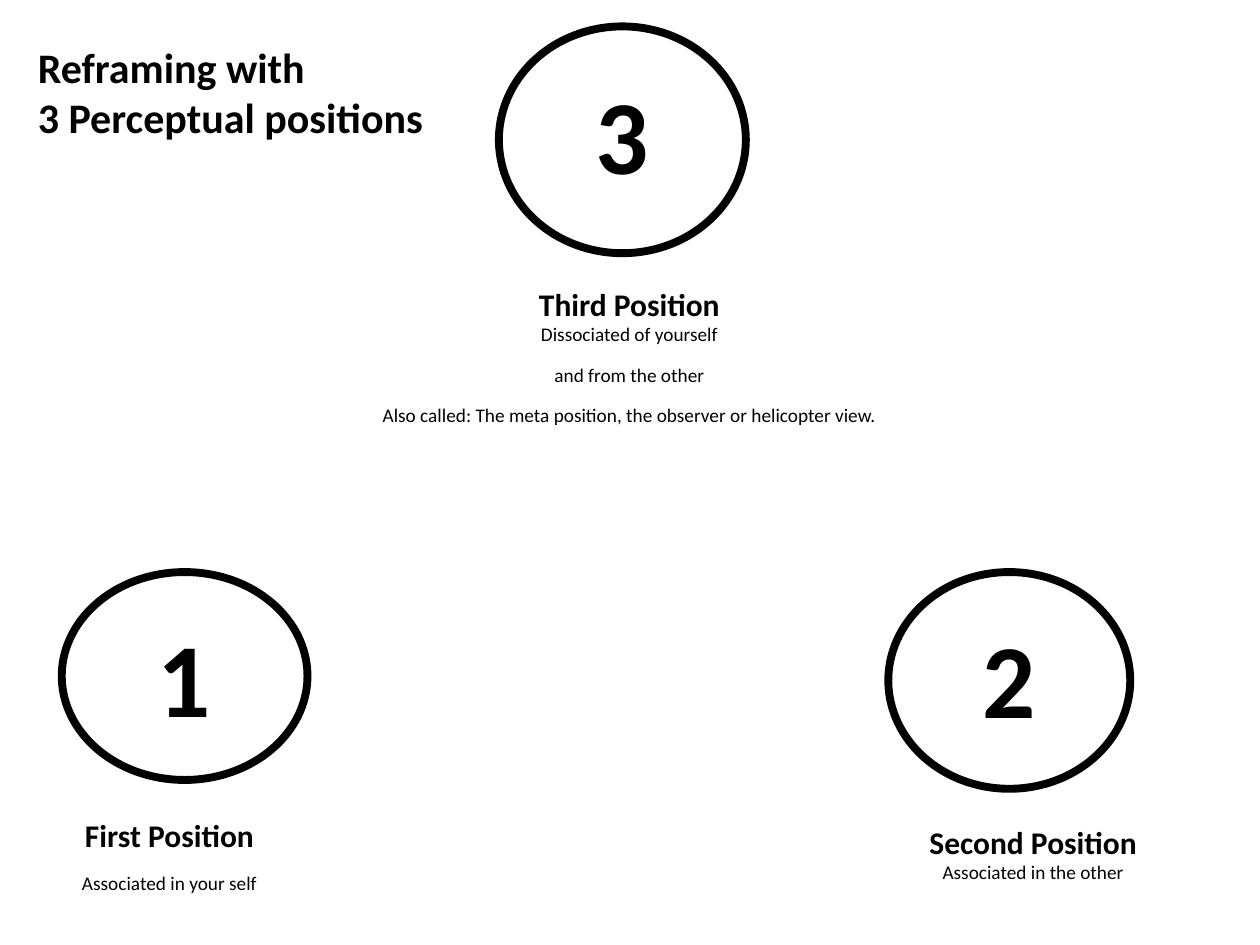
from pptx import Presentation
from pptx.dml.color import RGBColor
from pptx.enum.shapes import MSO_SHAPE
from pptx.enum.text import MSO_ANCHOR, MSO_AUTO_SIZE, PP_ALIGN
from pptx.util import Inches, Pt

OVAL, RECT = MSO_SHAPE.OVAL, MSO_SHAPE.RECTANGLE
TOP = MSO_ANCHOR.TOP
FIT = MSO_AUTO_SIZE.SHAPE_TO_FIT_TEXT
LEFT, CENTER = PP_ALIGN.LEFT, PP_ALIGN.CENTER
FONT, INK, PAPER = "Calibri", "000000", "FFFFFF"

# number, circle box, label box, heading, gap after heading, details
SPOTS = [
    ("3", (3.96, 0.21, 1.96, 1.8), (2.87, 2.21, 4.25, 1.46),
     "Third Position", 0,
     ["Dissociated of yourself", "and from the other",
      "Also called: The meta position, the observer or helicopter view."]),
    ("1", (0.49, 4.54, 1.95, 1.65), (0, 6.43, 2.69, 0.75),
     "First Position", 10, ["Associated in your self"]),
    ("2", (7.05, 4.54, 1.92, 1.72), (7.07, 6.48, 2.26, 1.02),
     "Second Position", 0, ["Associated in the other"]),
]


def color(code):
    return RGBColor.from_string(code)


def write(frame, lines, align):
    """Fill the frame with (text, size, bold, gap after) lines."""
    frame.vertical_anchor = TOP
    for i, (text, size, bold, gap) in enumerate(lines):
        para = frame.paragraphs[0] if i == 0 else frame.add_paragraph()
        para.text = text
        para.alignment = align
        para.space_after = Pt(gap)
        font = para.font
        font.name, font.size, font.bold = FONT, Pt(size), bold
        font.color.rgb = color(INK)


def add_box(slide, kind, box):
    shape = slide.shapes.add_shape(kind, *map(Inches, box))
    shape.shadow.inherit = False
    shape.fill.solid()
    shape.fill.fore_color.rgb = color(PAPER)
    shape.text_frame.word_wrap = True
    return shape


def add_circle(slide, box, number):
    shape = add_box(slide, OVAL, box)
    shape.line.color.rgb = color(INK)
    shape.line.width = Pt(4.5)
    shape.text_frame.margin_top = Inches(0.08)
    write(shape.text_frame, [(number, 60, True, 10)], CENTER)


def add_label(slide, box, head, gap, notes):
    shape = add_box(slide, RECT, box)
    shape.line.fill.background()
    lines = [(head, 18, True, gap)] + [(note, 11, False, 10) for note in notes]
    write(shape.text_frame, lines, CENTER)


def add_title(slide, box):
    title = slide.shapes.title
    title.left, title.top, title.width, title.height = map(Inches, box)
    frame = title.text_frame
    frame.word_wrap = False
    frame.auto_size = FIT
    lines = ["Reframing with", "3 Perceptual positions"]
    write(frame, [(line, 24, True, 0) for line in lines], LEFT)


def main():
    deck = Presentation()
    deck.slide_width, deck.slide_height = Inches(10), Inches(7.5)
    slide = deck.slides.add_slide(deck.slide_layouts[5])
    for number, circle, label, head, gap, notes in SPOTS:
        add_circle(slide, circle, number)
        add_label(slide, label, head, gap, notes)
    add_title(slide, (0.2, 0.28, 3.29, 0.91))
    deck.save("out.pptx")


if __name__ == "__main__":
    main()
